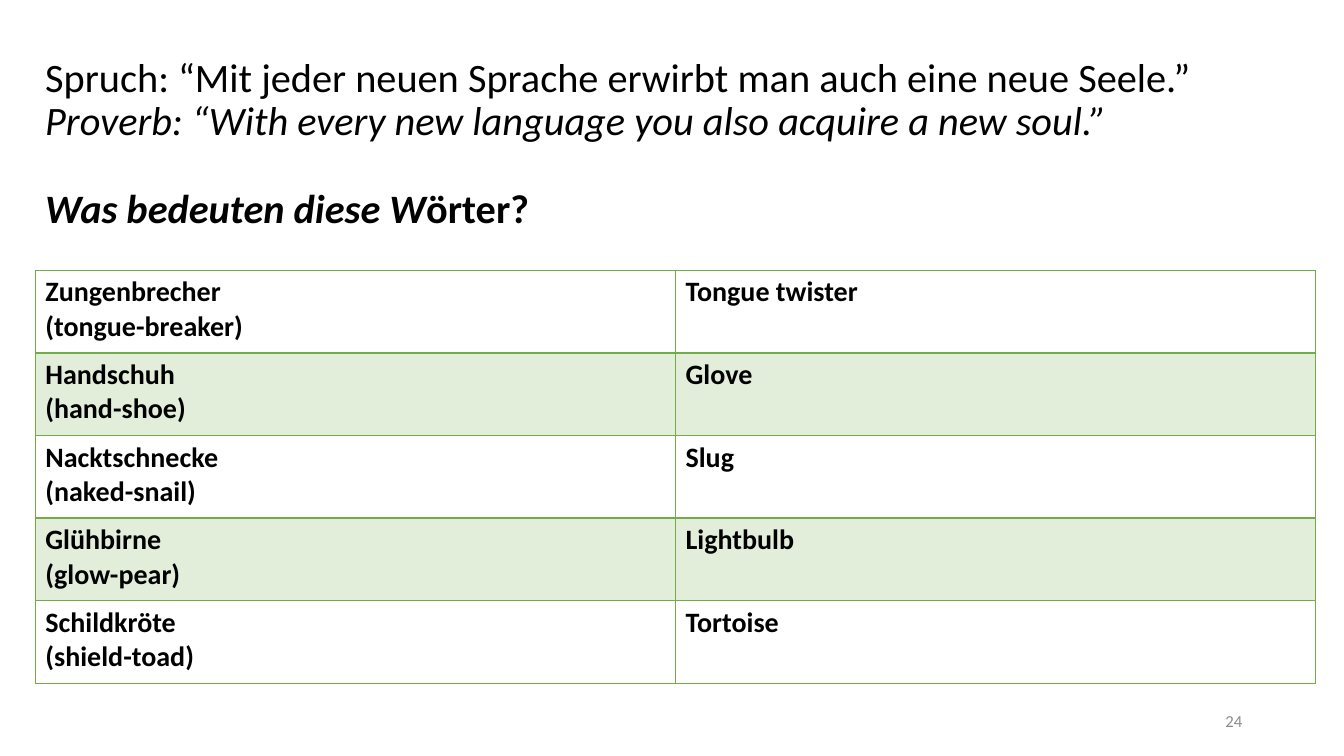
import pptx
import pptx.util
import pptx.dml.color
import pptx.enum.text
import pptx.oxml.ns
import lxml.etree

COLORS = {"text": "000000", "number": "8C8C8C", "green": "70AD47"}
FONT = "Calibri"
LEFT = 0.35
COLUMN_WIDTH, ROW_HEIGHT = 6.35, 0.82
BAND_OPACITY = 20

Inches, Pt = pptx.util.Inches, pptx.util.Pt
RGB = pptx.dml.color.RGBColor.from_string


def format_run(run, size, color="text", bold=False, italic=False):
    run.font.name, run.font.size = FONT, Pt(size)
    run.font.bold, run.font.italic = bold, italic
    run.font.color.rgb = RGB(COLORS[color])


def add_border(cell, side, width):
    tag = pptx.oxml.ns.qn
    line = lxml.etree.SubElement(cell._tc.get_or_add_tcPr(), tag(f"a:ln{side}"), w=str(Pt(width)))
    fill = lxml.etree.SubElement(line, tag("a:solidFill"))
    lxml.etree.SubElement(fill, tag("a:srgbClr"), val=COLORS["green"])


deck = pptx.Presentation()
deck.slide_width, deck.slide_height = Inches(13.33), Inches(7.5)
page = deck.slides.add_slide(deck.slide_layouts[6])

# Proverb and question: each paragraph is a list of (text, bold, italic)
heading = [
    [("Spruch: “Mit jeder neuen Sprache erwirbt man auch eine neue Seele.”", False, False)],
    [("Proverb: “With every new language you also acquire a new soul.”", False, True)],
    [("Was bedeuten diese W", True, True), ("örter?", True, False)],
]
box = page.shapes.add_textbox(Inches(LEFT), Inches(0.52), Inches(12.36), Inches(1.85))
frame = box.text_frame
frame.word_wrap = True
for index, spans in enumerate(heading):
    para = frame.paragraphs[0] if index == 0 else frame.add_paragraph()
    para.line_spacing = 0.9
    for text, bold, italic in spans:
        span = para.add_run()
        span.text = text
        format_run(span, 28.8, bold=bold, italic=italic)
frame.paragraphs[-1].space_before = Pt(31.5)

# Vocabulary table
words = [
    ("Zungenbrecher\n(tongue-breaker)", "Tongue twister"),
    ("Handschuh\n(hand-shoe)", "Glove"),
    ("Nacktschnecke\n(naked-snail)", "Slug"),
    ("Glühbirne\n(glow-pear)", "Lightbulb"),
    ("Schildkröte\n(shield-toad)", "Tortoise"),
]
table = page.shapes.add_table(
    len(words), 2, Inches(LEFT), Inches(2.68),
    Inches(2 * COLUMN_WIDTH), Inches(len(words) * ROW_HEIGHT)).table
table.first_row = table.horz_banding = False
for column in table.columns:
    column.width = Inches(COLUMN_WIDTH)
for row_index, entry in enumerate(words):
    table.rows[row_index].height = Inches(ROW_HEIGHT)
    for column_index, text in enumerate(entry):
        cell = table.cell(row_index, column_index)
        cell.text_frame.text = text
        for para in cell.text_frame.paragraphs:
            format_run(para.runs[0], 20, bold=True)
        # The line under the first row is heavier
        add_border(cell, "L", 1)
        add_border(cell, "R", 1)
        add_border(cell, "T", 2 if row_index == 1 else 1)
        add_border(cell, "B", 2 if row_index == 0 else 1)
        # Every second row has a translucent band
        if row_index % 2:
            cell.fill.solid()
            cell.fill.fore_color.rgb = RGB(COLORS["green"])
            tint = cell._tc.tcPr.find("a:solidFill/a:srgbClr", pptx.oxml.ns._nsmap)
            lxml.etree.SubElement(tint, pptx.oxml.ns.qn("a:alpha"), val=str(BAND_OPACITY * 1000))
        else:
            cell.fill.background()

# Page number
number = page.shapes.add_textbox(Inches(9.42), Inches(6.95), Inches(3), Inches(0.4))
number.text_frame.word_wrap = True
number.text_frame.vertical_anchor = pptx.enum.text.MSO_ANCHOR.MIDDLE
number.text_frame.text = "24"
para = number.text_frame.paragraphs[0]
para.alignment = pptx.enum.text.PP_ALIGN.RIGHT
format_run(para.runs[0], 12, "number")

deck.save("out.pptx")
